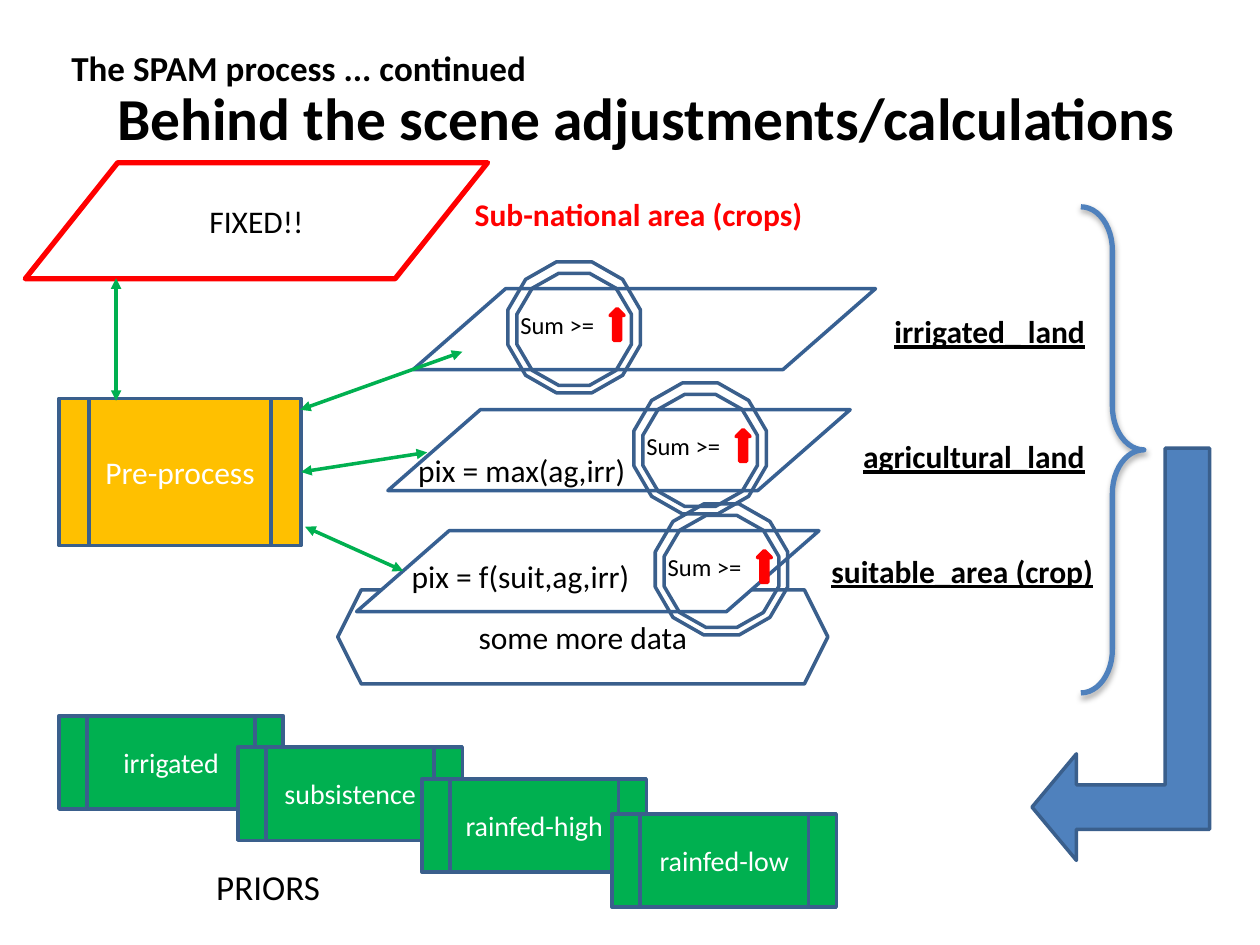
from dataclasses import dataclass

from lxml import etree
from pptx import Presentation
from pptx.dml.color import RGBColor
from pptx.enum.shapes import MSO_CONNECTOR, MSO_SHAPE
from pptx.enum.text import MSO_ANCHOR, PP_ALIGN
from pptx.oxml import parse_xml
from pptx.oxml.ns import nsdecls, qn
from pptx.util import Cm, Pt

BLACK = RGBColor(0x00, 0x00, 0x00)
WHITE = RGBColor(0xFF, 0xFF, 0xFF)
RED = RGBColor(0xFF, 0x00, 0x00)
GREEN = RGBColor(0x00, 0xB0, 0x50)
AMBER = RGBColor(0xFF, 0xC0, 0x00)
BLUE = RGBColor(0x4F, 0x81, 0xBD)
OUTLINE = RGBColor(0x3A, 0x5F, 0x8C)
PLANE_OUTLINE = RGBColor(0x37, 0x60, 0x92)

FONT = "Calibri"
LAYER_STEP = 2.44
PLANE_WIDTH = 9.32


@dataclass
class Box:
    """A region of the slide, in centimetres."""
    left: float
    top: float
    width: float
    height: float

    def inside(self, left, top, width=0, height=0):
        """Return a box placed relative to this one."""
        return Box(self.left + left, self.top + top, width, height)

    def lengths(self):
        return Cm(self.left), Cm(self.top), Cm(self.width), Cm(self.height)


def write(shape, text, size, color, bold=False, underline=None, align=PP_ALIGN.LEFT):
    shape.text_frame.text = text
    paragraph = shape.text_frame.paragraphs[0]
    paragraph.alignment = align
    font = paragraph.runs[0].font
    font.name, font.size, font.bold, font.underline = FONT, Pt(size), bold, underline
    font.color.rgb = color


def add_label(shapes, box, text, size=18, color=BLACK, bold=False, underline=None):
    label = shapes.add_textbox(*box.lengths())
    label.text_frame.word_wrap = True
    write(label, text, size, color, bold, underline)
    return label


def add_figure(shapes, kind, box, fill=None, line=OUTLINE, line_width=2,
               text=None, size=18, color=BLACK):
    shape = shapes.add_shape(kind, *box.lengths())
    shape.shadow.inherit = False
    if fill is None:
        shape.fill.background()
    else:
        shape.fill.solid()
        shape.fill.fore_color.rgb = fill
    shape.line.color.rgb = line
    shape.line.width = Pt(line_width)
    if text:
        shape.text_frame.vertical_anchor = MSO_ANCHOR.MIDDLE
        write(shape, text, size, color, align=PP_ALIGN.CENTER)
    return shape


def add_double_arrow(shapes, begin, end):
    connector = shapes.add_connector(
        MSO_CONNECTOR.STRAIGHT, Cm(begin.left), Cm(begin.top), Cm(end.left), Cm(end.top))
    connector.line.color.rgb = GREEN
    connector.line.width = Pt(2)
    line = connector.line._get_or_add_ln()
    for tag in ("a:headEnd", "a:tailEnd"):
        etree.SubElement(line, qn(tag), type="triangle")
    etree.SubElement(connector._element.spPr, qn("a:effectLst"))
    return connector


def add_heading(slide, box):
    title = slide.shapes.title
    title.left, title.top, title.width, title.height = box.inside(0.08, 0.99, 23.5, 2.18).lengths()
    title.text_frame.vertical_anchor = MSO_ANCHOR.MIDDLE
    write(title, "Behind the scene adjustments/calculations", 34, BLACK, True,
          align=PP_ALIGN.CENTER)
    kicker = add_label(slide.shapes, box.inside(0, 0, 23.5, 2.18),
                       "The SPAM process ... continued", 20, bold=True)
    kicker.text_frame.vertical_anchor = MSO_ANCHOR.MIDDLE


def add_sum_badge(shapes, box):
    """Group a double ring, a sum sign and an upward arrow."""
    group = shapes.add_group_shape().shapes
    add_label(group, box.inside(0, 0.84, 2.06, 0.86), "Sum >=", 14)
    add_figure(group, MSO_SHAPE.DODECAGON, box.inside(0.18, 0.23, 2.31, 2.26))
    add_figure(group, MSO_SHAPE.UP_ARROW, box.inside(2.06, 0.94, 0.28, 0.64), RED, RED)
    add_figure(group, MSO_SHAPE.DODECAGON, box)


def add_layers(slide, box):
    """Stack the land layers over the extra data, each with its sum check."""
    shapes = slide.shapes
    add_figure(shapes, MSO_SHAPE.HEXAGON, box.inside(0, 6.61, 9.88, 1.9), WHITE,
               text="some more data")
    for row, left in reversed(list(enumerate((1.52, 1.01, 0.38)))):
        add_figure(shapes, MSO_SHAPE.FLOWCHART_DATA,
                   box.inside(left, 0.54 + row * LAYER_STEP, PLANE_WIDTH, 1.63),
                   WHITE, PLANE_OUTLINE)
    for text, left, top, width in (("irrigated_ land", 10.97, 0.89, 6.99),
                                   ("agricultural_land", 10.34, 3.41, 7.42),
                                   ("suitable_area (crop)", 9.7, 5.72, 7.42)):
        add_label(shapes, box.inside(left, top, width, 1.02), text, bold=True, underline=True)
    for text, left, top in (("pix = max(ag,irr)", 1.37, 3.69),
                            ("pix = f(suit,ag,irr)", 1.24, 5.82)):
        add_label(shapes, box.inside(left, top, 7.42, 1.02), text)
    for row, left in enumerate((3.43, 5.97, 6.4)):
        add_sum_badge(shapes, box.inside(left, row * LAYER_STEP, 2.67, 2.64))


def add_preprocess(slide, box):
    """Place the fixed area, the pre-process step and the arrows around it."""
    shapes = slide.shapes
    add_figure(shapes, MSO_SHAPE.FLOWCHART_DATA, box.inside(0, 0, PLANE_WIDTH, 2.34),
               WHITE, RED, 3, "FIXED!!")
    add_label(shapes, box.inside(8.81, 0.53, 9.96, 1.02), "Sub-national area (crops)",
              color=RED, bold=True)
    process = add_figure(shapes, MSO_SHAPE.FLOWCHART_PREDEFINED_PROCESS,
                         box.inside(0.68, 4.75, 4.88, 2.97), AMBER,
                         text="Pre-process", color=WHITE)
    for begin, end in (((1.83, 2.33), (1.83, 4.8)),
                       ((5.54, 4.98), (8.81, 3.81)),
                       ((5.64, 7.34), (7.62, 8.23))):
        add_double_arrow(shapes, box.inside(*begin), box.inside(*end))
    middle = add_double_arrow(shapes, box.inside(5.56, 6.24), box.inside(8.1, 5.84))
    middle.begin_connect(process, 3)


def add_result(slide, box):
    """Brace the layers and lead them down to the priors."""
    brace = add_figure(slide.shapes, MSO_SHAPE.RIGHT_BRACE, box.inside(3.35, 0, 1.27, 9.8),
                       line=BLUE, line_width=3)
    brace.adjustments[0] = 0.69
    effects = brace._element.spPr.find(qn("a:effectLst"))
    effects.append(parse_xml(
        f'<a:outerShdw {nsdecls("a")} blurRad="40000" dist="23000" dir="5400000" '
        'rotWithShape="0"><a:srgbClr val="000000"><a:alpha val="35000"/></a:srgbClr>'
        '</a:outerShdw>'))
    arrow = add_figure(slide.shapes, MSO_SHAPE.BENT_UP_ARROW,
                       box.inside(0, 7.23, 8.31, 3.58), BLUE)
    arrow.adjustments[1] = 0.3
    arrow.rotation = 90
    arrow._element.spPr.get_or_add_xfrm().set("flipV", "1")


def add_priors(slide, box):
    for text, left, top in (("irrigated", 0, 0), ("subsistence", 3.61, 0.63),
                            ("rainfed-high", 7.32, 1.27), ("rainfed-low", 11.15, 1.98)):
        add_figure(slide.shapes, MSO_SHAPE.FLOWCHART_PREDEFINED_PROCESS,
                   box.inside(left, top, 4.52, 1.88), GREEN, text=text, size=16, color=WHITE)
    add_label(slide.shapes, box.inside(2.92, 2.89, 3.25, 1.12), "PRIORS", 20)


def main():
    presentation = Presentation()
    presentation.slide_width, presentation.slide_height = Cm(25.4), Cm(19.05)
    slide = presentation.slides.add_slide(presentation.slide_layouts[5])
    add_heading(slide, Box(1.19, 0.28, 23.58, 3.17))
    add_layers(slide, Box(6.81, 5.28, 17.96, 8.51))
    add_preprocess(slide, Box(0.51, 3.28, 18.77, 8.23))
    add_result(slide, Box(18.44, 4.17, 8.31, 10.81))
    add_priors(slide, Box(1.19, 14.43, 15.67, 4.01))
    presentation.save("out.pptx")


if __name__ == "__main__":
    main()
